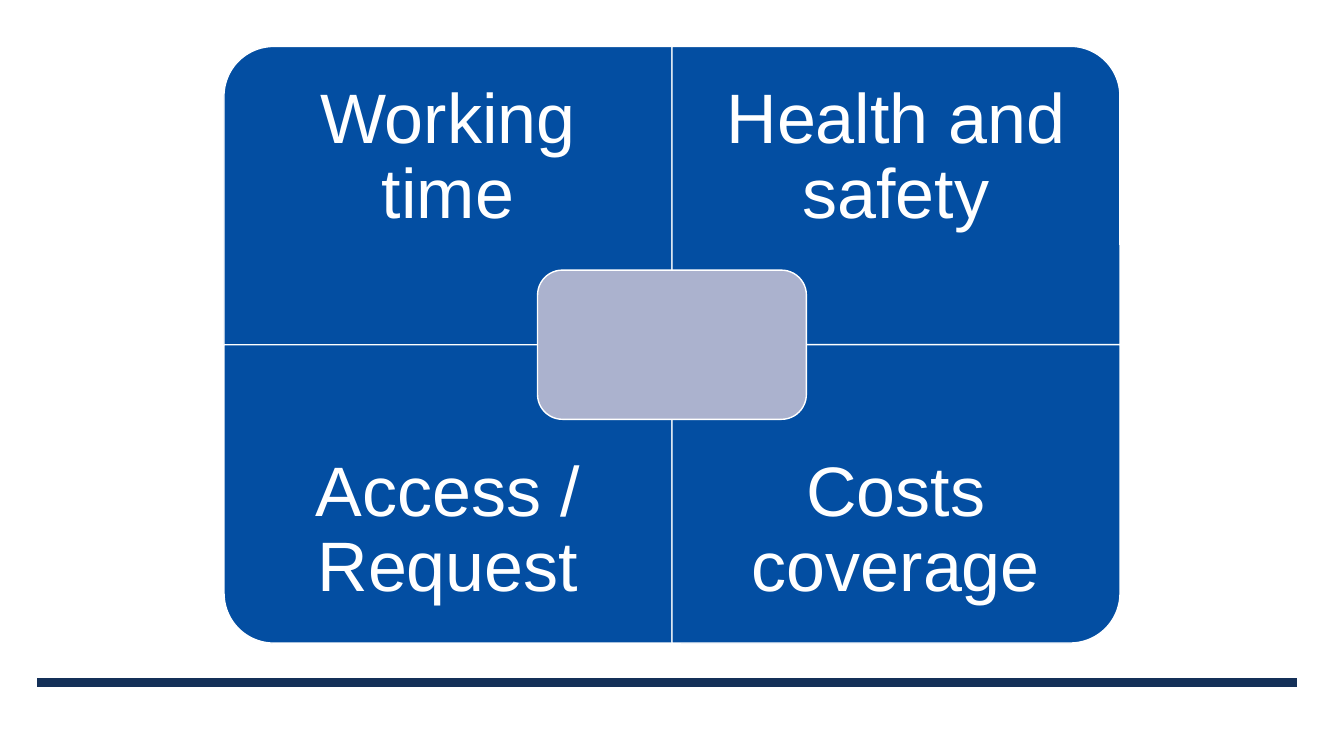
"""Build a slide with four topic quadrants around a central panel."""
from dataclasses import dataclass

from lxml import etree
from pptx import Presentation
from pptx import util as u
from pptx.dml.color import RGBColor
from pptx.enum import shapes, text
from pptx.oxml.ns import qn

WHITE = RGBColor(0xFF, 0xFF, 0xFF)
BLUE = RGBColor(0x03, 0x4E, 0xA2)
LILAC = RGBColor(0xAB, 0xB2, 0xCE)
NAVY = RGBColor(0x14, 0x30, 0x58)

SLIDE_WIDTH, SLIDE_HEIGHT = u.Inches(13.33), u.Inches(7.5)
COLUMN, ROW = SLIDE_WIDTH / 30, u.Inches(0.37)
TOP = u.Inches(0.46)
INSET = u.Inches(0.39)
FONT = {"name": "Arial", "size": u.Pt(50)}
FRAME = {
    "word_wrap": True,
    "vertical_anchor": text.MSO_ANCHOR.MIDDLE,
    "margin_left": INSET,
    "margin_right": INSET,
    "margin_top": INSET,
    "margin_bottom": INSET,
}
PARAGRAPH = {"alignment": text.PP_ALIGN.CENTER, "line_spacing": 0.9}


@dataclass(frozen=True)
class Area:
    """A block of grid cells."""
    column: int
    row: int
    columns: int
    rows: int

    def bounds(self) -> tuple[int, int, int, int]:
        """Return left, top, width and height."""
        return (round(self.column * COLUMN), round(TOP + self.row * ROW),
                round(self.columns * COLUMN), round(self.rows * ROW))


@dataclass(frozen=True)
class Quadrant:
    """A panel with one rounded outer corner and its label area."""
    label: str
    panel: Area
    label_area: Area
    rotation: int


QUADRANTS = (
    Quadrant("Working time", Area(5, 0, 10, 8), Area(5, 0, 10, 6), 270),
    Quadrant("Health and safety", Area(15, 0, 10, 8), Area(15, 0, 10, 6), 0),
    Quadrant("Access / Request", Area(5, 8, 10, 8), Area(5, 10, 10, 6), 180),
    Quadrant("Costs coverage", Area(15, 8, 10, 8), Area(15, 10, 10, 6), 90),
)
CENTRE = Area(12, 6, 6, 4)


def apply(target: object, values: dict) -> None:
    """Set each attribute in values on the target."""
    for name, value in values.items():
        setattr(target, name, value)


def draw_panel(slide, kind, area: Area, colour: RGBColor, rotation: int = 0) -> None:
    """Draw a filled panel that covers the area once rotated."""
    left, top, width, height = area.bounds()
    if rotation % 180:
        left, top = left + (width - height) // 2, top + (height - width) // 2
        width, height = height, width
    shape = slide.shapes.add_shape(kind, left, top, width, height)
    shape.rotation = rotation
    shape.shadow.inherit = False
    shape.fill.solid()
    shape.fill.fore_color.rgb = colour
    shape.line.color.rgb = WHITE
    shape.line.width = u.Pt(1)


def draw_label(slide, quadrant: Quadrant) -> None:
    """Write the label of a quadrant."""
    frame = slide.shapes.add_textbox(*quadrant.label_area.bounds()).text_frame
    apply(frame, FRAME)
    paragraph = frame.paragraphs[0]
    apply(paragraph, PARAGRAPH)
    run = paragraph.add_run()
    run.text = quadrant.label
    apply(run.font, FONT)
    run.font.color.rgb = WHITE


def draw_footer_rule(slide) -> None:
    """Draw the thick rule at the foot of the slide."""
    height = u.Inches(6.77)
    rule = slide.shapes.add_connector(
        shapes.MSO_CONNECTOR.STRAIGHT, u.Inches(0.37), height, u.Inches(12.86), height)
    rule.line.color.rgb = NAVY
    rule.line.width = u.Pt(6)
    etree.SubElement(rule._element.spPr, qn("a:effectLst"))


def main() -> None:
    """Create and save the presentation."""
    presentation = Presentation()
    apply(presentation, {"slide_width": SLIDE_WIDTH, "slide_height": SLIDE_HEIGHT})
    slide = presentation.slides.add_slide(presentation.slide_layouts[6])
    draw_footer_rule(slide)
    for quadrant in QUADRANTS:
        draw_panel(slide, shapes.MSO_SHAPE.ROUND_1_RECTANGLE, quadrant.panel,
                   BLUE, quadrant.rotation)
        draw_label(slide, quadrant)
    draw_panel(slide, shapes.MSO_SHAPE.ROUNDED_RECTANGLE, CENTRE, LILAC)
    presentation.save("out.pptx")


if __name__ == "__main__":
    main()
